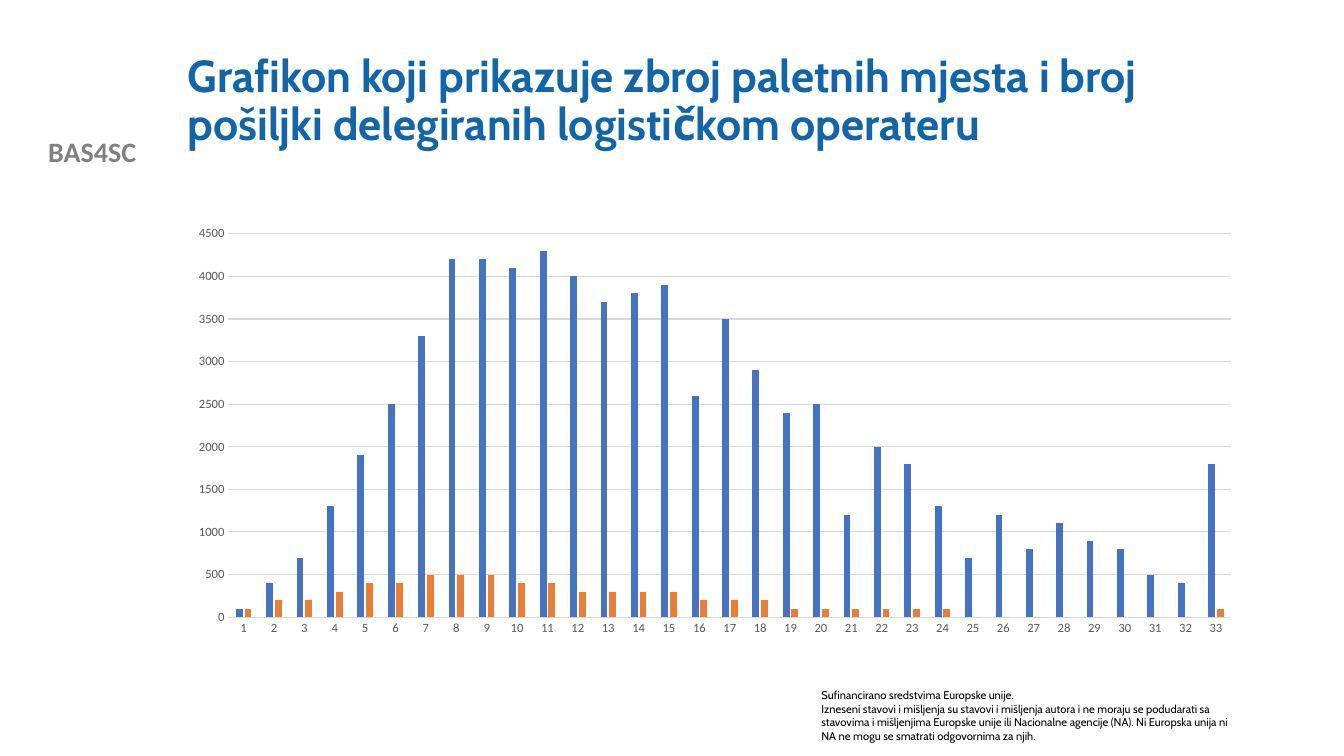
from pptx import Presentation, util as u
from pptx.chart.data import CategoryChartData
from pptx.dml.color import RGBColor
from pptx.enum import chart as ch, text

BLUE_TITLE = RGBColor(0x10, 0x65, 0xAB)
GRAY = RGBColor(0x80, 0x80, 0x80)
BLACK = RGBColor(0, 0, 0)
AXIS_TEXT = RGBColor(0x59, 0x59, 0x59)
GRID = RGBColor(0xD9, 0xD9, 0xD9)
BLUE = RGBColor(0x44, 0x72, 0xC4)
ORANGE = RGBColor(0xED, 0x7D, 0x31)

PALLETS = [100, 400, 700, 1300, 1900, 2500, 3300, 4200, 4200, 4100, 4300,
           4000, 3700, 3800, 3900, 2600, 3500, 2900, 2400, 2500, 1200, 2000,
           1800, 1300, 700, 1200, 800, 1100, 900, 800, 500, 400, 1800]
SHIPMENTS = [100, 200, 200, 300, 400, 400, 500, 500, 500, 400, 400,
             300, 300, 300, 300, 200, 200, 200, 100, 100, 100, 100,
             100, 100, 0, 0, 0, 0, 0, 0, 0, 0, 100]


class SlideBuilder:
    heading_font = "Cabin"
    body_font = "Calibri"

    def __init__(self, prs):
        self.s = prs.slides.add_slide(prs.slide_layouts[6])

    def set_font(self, font, name, size, color, bold=False):
        font.name, font.size, font.bold = name, u.Pt(size), bold
        font.color.rgb = color

    def text(self, box, content, name, size, color, bold=False,
             align=text.PP_ALIGN.LEFT, anchor=text.MSO_ANCHOR.TOP, spacing=1.0):
        sp = self.s.shapes.add_textbox(*map(u.Cm, box))
        tf = sp.text_frame
        tf.word_wrap = True
        tf.vertical_anchor = anchor
        tf.text = content
        for p in tf.paragraphs:
            p.alignment = align
            p.line_spacing = spacing
            for r in p.runs:
                self.set_font(r.font, name, size, color, bold)

    def column_chart(self, box, series):
        """Draw a clustered column chart from (name, values, color) rows."""
        data = CategoryChartData()
        data.categories = [str(i + 1) for i in range(len(series[0][1]))]
        for name, values, _ in series:
            data.add_series(name, values)
        chart = self.s.shapes.add_chart(
            ch.XL_CHART_TYPE.COLUMN_CLUSTERED, *map(u.Cm, box), data).chart
        chart.has_title = chart.has_legend = False
        self.set_font(chart.font, self.body_font, 10, BLACK)

        plot = chart.plots[0]
        plot.gap_width, plot.overlap = 219, -27
        plot.vary_by_categories = False
        for ser, (_, _, color) in zip(plot.series, series):
            ser.format.fill.solid()
            ser.format.fill.fore_color.rgb = color
            ser.invert_if_negative = False

        for axis in (chart.category_axis, chart.value_axis):
            axis.major_tick_mark = axis.minor_tick_mark = ch.XL_TICK_MARK.NONE
            self.set_font(axis.tick_labels.font, self.body_font, 9, AXIS_TEXT)
        self.hairline(chart.category_axis.format.line)
        values_axis = chart.value_axis
        values_axis.minimum_scale, values_axis.maximum_scale = 0, 4500
        values_axis.major_unit = 500
        values_axis.format.line.fill.background()
        values_axis.has_major_gridlines = True
        self.hairline(values_axis.major_gridlines.format.line)

    def hairline(self, line):
        line.color.rgb = GRID
        line.width = u.Pt(0.75)


def main():
    prs = Presentation()
    prs.slide_width, prs.slide_height = u.Cm(33.87), u.Cm(19.05)
    b = SlideBuilder(prs)
    b.text((0, 3.26, 4.65, 1.12), "BAS4SC", b.body_font, 20, GRAY, bold=True,
           align=text.PP_ALIGN.CENTER)
    b.text((20.45, 17.23, 11.1, 1.63),
           "Sufinancirano sredstvima Europske unije.\n"
           "Izneseni stavovi i mišljenja su stavovi i mišljenja autora i ne "
           "moraju se podudarati sa stavovima i mišljenjima Europske unije ili "
           "Nacionalne agencije (NA). Ni Europska unija ni NA ne mogu se "
           "smatrati odgovornima za njih.",
           b.heading_font, 8, BLACK)
    b.text((4.48, 1.02, 27.08, 3.1),
           "Grafikon koji prikazuje zbroj paletnih mjesta i broj pošiljki "
           "delegiranih logističkom operateru",
           b.heading_font, 32, BLUE_TITLE, bold=True,
           anchor=text.MSO_ANCHOR.MIDDLE, spacing=0.9)
    b.column_chart((4.47, 5.49, 27.1, 10.75),
                   [("Series 1", PALLETS, BLUE), ("Series 2", SHIPMENTS, ORANGE)])
    prs.save("out.pptx")


if __name__ == "__main__":
    main()
